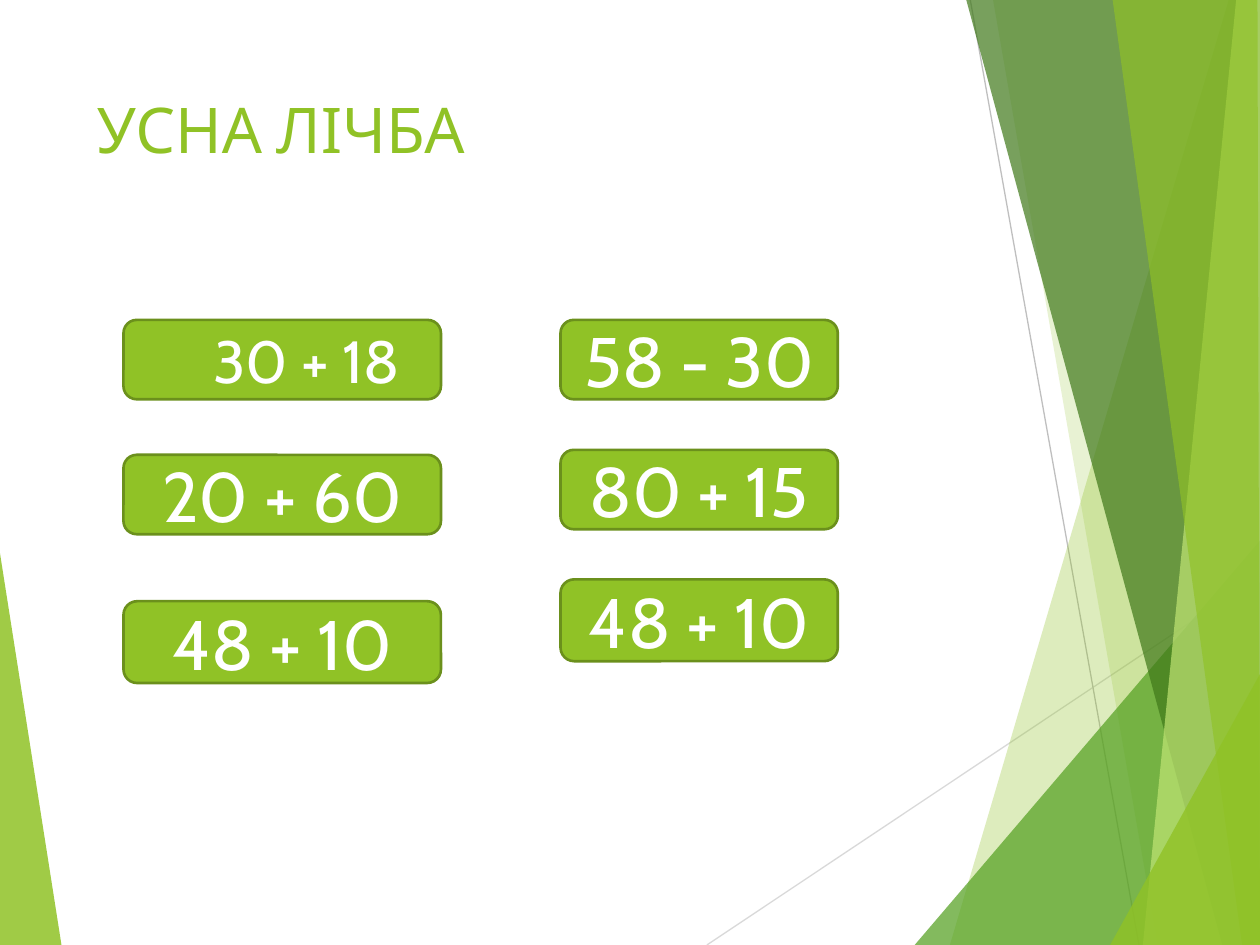
from lxml.etree import SubElement
from pptx import Presentation
from pptx.dml.color import RGBColor
from pptx.enum.shapes import MSO_CONNECTOR as CONNECTOR, MSO_SHAPE as SHAPE
from pptx.enum.text import MSO_ANCHOR as ANCHOR, PP_ALIGN as ALIGN
from pptx.oxml.ns import qn
from pptx.util import Cm, Pt

W, H = 25.4, 19.05
FONT = "Cabin"
COLORS = {
    "lime": "90C226", "leaf": "54A021", "forest": "3F7819", "pale": "C0E474",
    "border": "6B901C", "white": "FFFFFF", "ray": "D9D9D9", "dark_ray": "BFBFBF",
}

TITLE = "УСНА ЛІЧБА"

# start, end, colour
RAYS = [
    ((14.25, H), (W, 11.61), "ray"),
    ((19.56, 0), (22.96, H), "dark_ray"),
]

# corners, colour, opacity in percent
FACETS = [
    ([(0, 11.15), (1.24, H), (0, H)], "lime", 85),
    ([(24.77, 0), (19.15, H), (W, H), (W, 0)], "lime", 30),
    ([(20.02, 0), (23.34, H), (W, H), (W, 0)], "lime", 20),
    ([(18.44, H), (W, 10.9), (W, H)], "leaf", 72),
    ([(19.48, 0), (24.64, H), (W, H), (W, 0)], "forest", 70),
    ([(24.92, 0), (23.04, H), (W, H), (W, 0)], "pale", 70),
    ([(22.43, 0), (25.04, H), (W, H), (25.35, 0)], "lime", 65),
    ([(22.38, H), (W, 13.59), (W, H)], "lime", 80),
]

# left, width, then (top, height, sum, text size, text indent) down the column
COLUMNS = [
    (2.49, 6.4, [(6.45, 1.6, "30 + 18", 34, 0.97),
                 (9.17, 1.6, "20 + 60", 40, 0),
                 (12.12, 1.65, "48 + 10", 40, 0)]),
    (11.3, 5.59, [(6.45, 1.6, "58 - 30", 40, 0),
                  (9.07, 1.6, "80 + 15", 40, 0),
                  (11.68, 1.65, "48 + 10", 40, 0)]),
]


def rgb(name):
    return RGBColor.from_string(COLORS[name])


def set_fill(s, color, opacity=100):
    s.shadow.inherit = False
    s.fill.solid()
    s.fill.fore_color.rgb = rgb(color)
    if opacity < 100:
        clr = s.fill._xPr.find(qn("a:solidFill"))[0]
        SubElement(clr, qn("a:alpha")).set("val", str(opacity * 1000))


def add_ray(shapes, start, end, color):
    line = shapes.add_connector(CONNECTOR.STRAIGHT, *map(Cm, start + end))
    line.line.color.rgb = rgb(color)
    line.line.width = Pt(0.75)
    SubElement(line._element.spPr, qn("a:effectLst"))


def add_facet(shapes, corners, color, opacity):
    first, *rest = [(Cm(x), Cm(y)) for x, y in corners]
    builder = shapes.build_freeform(*first)
    builder.add_line_segments(rest, close=True)
    s = builder.convert_to_shape()
    set_fill(s, color, opacity)
    s.line.fill.background()


def write(s, text, color, size, align, anchor):
    tf = s.text_frame
    tf.word_wrap = True
    tf.vertical_anchor = anchor
    p = tf.paragraphs[0]
    p.alignment = align
    r = p.add_run()
    r.text = text
    for name, value in {"name": FONT, "size": Pt(size)}.items():
        setattr(r.font, name, value)
    r.font.color.rgb = rgb(color)
    return p


def add_card(shapes, left, top, width, height, text, size, indent):
    s = shapes.add_shape(SHAPE.ROUNDED_RECTANGLE, *map(Cm, (left, top, width, height)))
    set_fill(s, "lime")
    s.line.color.rgb = rgb("border")
    s.line.width = Pt(1.5)
    p = write(s, text, "white", size, ALIGN.CENTER, ANCHOR.MIDDLE)
    if indent:
        p._p.get_or_add_pPr().set("marL", str(Cm(indent)))


def main():
    prs = Presentation()
    prs.slide_width, prs.slide_height = Cm(W), Cm(H)
    shapes = prs.slides.add_slide(prs.slide_layouts[6]).shapes

    add_facet(shapes, *FACETS[0])
    for ray in RAYS:
        add_ray(shapes, *ray)
    for facet in FACETS[1:]:
        add_facet(shapes, *facet)

    title = shapes.add_textbox(Cm(1.7), Cm(1.7), Cm(17.63), Cm(3.66))
    write(title, TITLE, "lime", 36, ALIGN.LEFT, ANCHOR.TOP)

    for left, width, cards in COLUMNS:
        for top, height, text, size, indent in cards:
            add_card(shapes, left, top, width, height, text, size, indent)

    prs.save("out.pptx")


if __name__ == "__main__":
    main()
